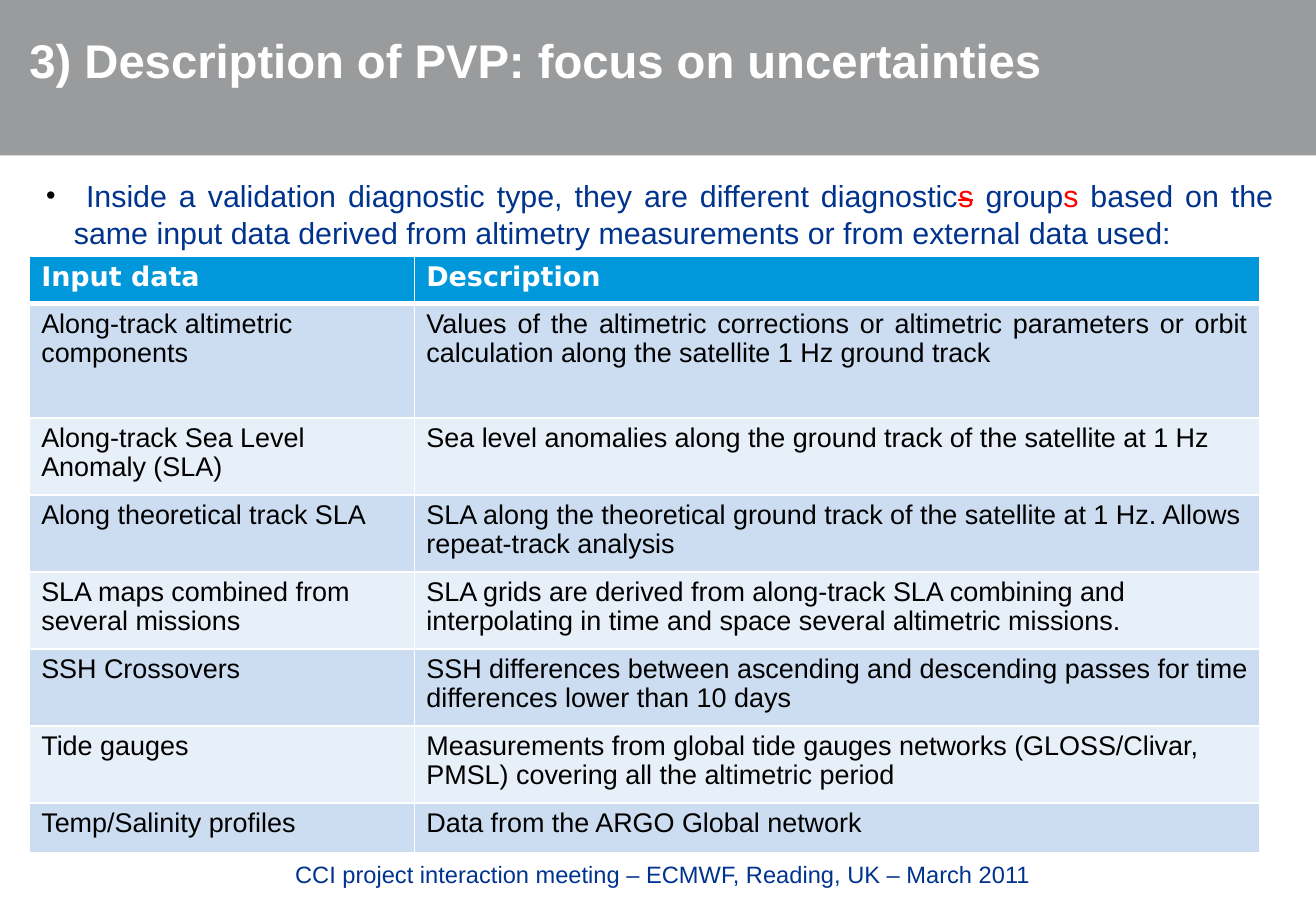
from dataclasses import dataclass

from lxml import etree
from pptx import Presentation
from pptx.dml.color import RGBColor
from pptx.enum.shapes import MSO_SHAPE
from pptx.enum.text import MSO_ANCHOR, MSO_AUTO_SIZE, PP_ALIGN
from pptx.oxml.ns import qn
from pptx.util import Cm, Pt

RECT = MSO_SHAPE.RECTANGLE
TOP = MSO_ANCHOR.TOP
NO_FIT = MSO_AUTO_SIZE.NONE
LEFT, JUSTIFY = PP_ALIGN.LEFT, PP_ALIGN.JUSTIFY

WHITE = RGBColor(0xFF, 0xFF, 0xFF)
BLACK = RGBColor(0, 0, 0)
GREY = RGBColor(0x9A, 0x9B, 0x9C)
NAVY = RGBColor(0x00, 0x33, 0x8D)
RED = RGBColor(0xFF, 0, 0)
HEADER_BLUE = RGBColor(0x00, 0x98, 0xDB)
BAND_DARK = RGBColor(0xCC, 0xDD, 0xF1)
BAND_LIGHT = RGBColor(0xE7, 0xEF, 0xF8)

SANS, HEADER_FONT = "Arial", "DejaVu Sans"


@dataclass
class Span:
    text: str
    color: RGBColor
    size: float = 18
    font: str = SANS
    bold: bool = False
    strike: bool = False


@dataclass
class Row:
    source: str
    description: str
    height: float = 1.61
    align: PP_ALIGN = LEFT


ROWS = [
    Row("Input data", "Description", 0.99),
    Row("Along-track altimetric components",
        "Values of the altimetric corrections or altimetric parameters or orbit "
        "calculation along the satellite 1 Hz ground track", 2.39, JUSTIFY),
    Row("Along-track Sea Level Anomaly (SLA)",
        "Sea level anomalies along the ground track of the satellite at 1 Hz"),
    Row("Along theoretical track SLA",
        "SLA along the theoretical ground track of the satellite at 1 Hz. "
        "Allows repeat-track analysis"),
    Row("SLA maps combined from several missions",
        "SLA grids are derived from along-track SLA combining and interpolating "
        "in time and space several altimetric missions."),
    Row("SSH Crossovers",
        "SSH differences between ascending and descending passes for time "
        "differences lower than 10 days"),
    Row("Tide gauges",
        "Measurements from global tide gauges networks (GLOSS/Clivar, PMSL) "
        "covering all the altimetric period"),
    Row("Temp/Salinity profiles", "Data from the ARGO Global network", 1.04),
]
COL_WIDTHS = (8.05, 17.68)

INTRO = [
    Span(" ", BLACK, 16, HEADER_FONT),
    Span("Inside a validation diagnostic type, they are different diagnostic", NAVY),
    Span("s", RED, strike=True),
    Span(" group", NAVY),
    Span("s ", RED),
    Span("based on the same input data derived from altimetry measurements "
         "or from external data used:", NAVY),
]


def write(tf, spans: list[Span], align: PP_ALIGN = LEFT, spacing: float = 1.0):
    """Fill the first paragraph run by run and return it."""
    tf.word_wrap = True
    p = tf.paragraphs[0]
    p.alignment, p.line_spacing, p.space_before = align, spacing, Pt(0)
    for span in spans:
        r = p.add_run()
        r.text = span.text
        r.font.name, r.font.size, r.font.bold = span.font, Pt(span.size), span.bold
        r.font.color.rgb = span.color
        if span.strike:
            r._r.get_or_add_rPr().set("strike", "sngStrike")
    return p


def place(sp, left: float, top: float, width: float, height: float) -> None:
    sp.left, sp.top, sp.width, sp.height = Cm(left), Cm(top), Cm(width), Cm(height)
    sp.text_frame.auto_size = NO_FIT
    sp.text_frame.vertical_anchor = TOP


def add_bullet(p, color: RGBColor, hang: int) -> None:
    pPr = p._p.get_or_add_pPr()
    pPr.set("marL", str(hang))
    pPr.set("indent", str(-hang))
    clr = etree.SubElement(pPr, qn("a:buClr"))
    etree.SubElement(clr, qn("a:srgbClr"), val=str(color))
    etree.SubElement(pPr, qn("a:buFont"), typeface=SANS)
    etree.SubElement(pPr, qn("a:buChar"), char="•")


def set_borders(cell, color: RGBColor, is_header: bool) -> None:
    tcPr = cell._tc.get_or_add_tcPr()
    for side in ("L", "R", "T", "B"):
        width = Pt(3 if is_header and side == "B" else 1)
        ln = etree.SubElement(tcPr, qn(f"a:ln{side}"), w=str(width))
        fill = etree.SubElement(ln, qn("a:solidFill"))
        etree.SubElement(fill, qn("a:srgbClr"), val=str(color))


def add_input_table(slide, left: float, top: float) -> None:
    height = sum(row.height for row in ROWS)
    table = slide.shapes.add_table(len(ROWS), len(COL_WIDTHS), Cm(left), Cm(top),
                                   Cm(sum(COL_WIDTHS)), Cm(height)).table
    for col, width in zip(table.columns, COL_WIDTHS):
        col.width = Cm(width)
    for i, row in enumerate(ROWS):
        table.rows[i].height = Cm(row.height)
        is_header = i == 0
        band = BAND_DARK if i % 2 else BAND_LIGHT
        cells = ((row.source, LEFT), (row.description, row.align))
        for j, (text, align) in enumerate(cells):
            cell = table.cell(i, j)
            set_borders(cell, WHITE, is_header)
            cell.fill.solid()
            cell.fill.fore_color.rgb = HEADER_BLUE if is_header else band
            if is_header:
                span = Span(text, WHITE, 16, HEADER_FONT, bold=True)
            else:
                span = Span(text, BLACK, 16)
            write(cell.text_frame, [span], align, 0.97)


def main() -> None:
    prs = Presentation()
    prs.slide_width, prs.slide_height = Cm(27.51), Cm(19.05)
    slide = prs.slides.add_slide(prs.slide_layouts[1])
    title, body = slide.placeholders

    # Title band, sent to the back
    band = slide.shapes.add_shape(RECT, 0, 0, prs.slide_width, Cm(3.25))
    band.shadow.inherit = False
    band.fill.solid()
    band.fill.fore_color.rgb = GREY
    band.line.fill.background()
    slide.shapes._spTree.insert(2, band._element)

    # Title
    place(title, 0.36, 0.71, 26.31, 1.96)
    write(title.text_frame, [Span("3) Description of PVP: focus on uncertainties",
                                  WHITE, 28, bold=True)], spacing=0.85)

    # Introduction
    place(body, 0.71, 3.58, 26.16, 1.8)
    p = write(body.text_frame, INTRO, JUSTIFY)
    add_bullet(p, BLACK, Cm(0.58))

    # Input data table
    add_input_table(slide, 0.61, 5.36)

    # Meeting line
    footer = slide.shapes.add_textbox(0, 0, 0, 0)
    place(footer, 5.92, 17.85, 17.04, 1.2)
    write(footer.text_frame, [Span(
        "CCI project interaction meeting – ECMWF, Reading, UK – March 2011", NAVY, 14)])

    prs.save("out.pptx")


if __name__ == "__main__":
    main()
